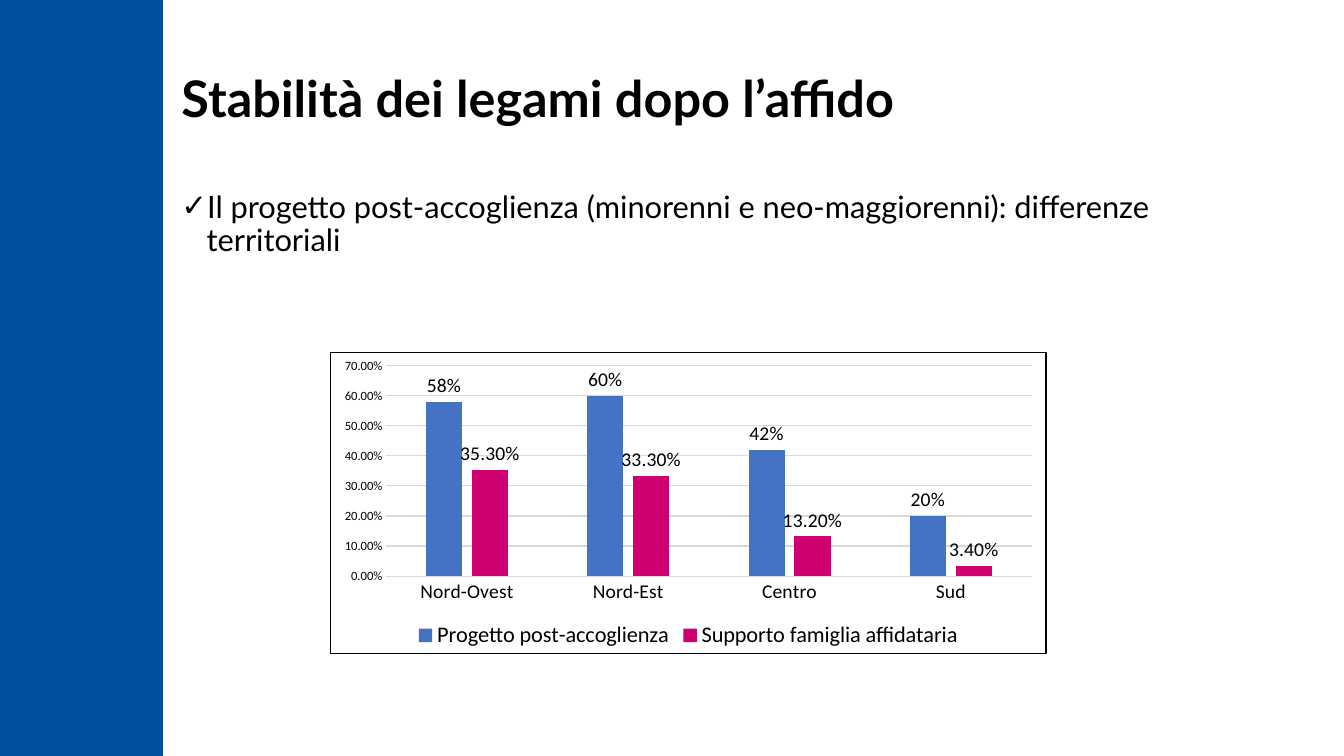
import pptx
import pptx.chart.data
import pptx.dml.color
import pptx.enum.chart
import pptx.enum.shapes
import pptx.enum.text
import pptx.oxml
import pptx.oxml.ns
import pptx.util
from dataclasses import dataclass

Inches = pptx.util.Inches
Pt = pptx.util.Pt
ChartEnum = pptx.enum.chart
TextEnum = pptx.enum.text


@dataclass(frozen=True)
class Theme:
    text_font: str = "Lato"
    chart_font: str = "Calibri"
    ink: str = "000000"
    paper: str = "FFFFFF"
    band: str = "004F9F"
    grid: str = "D9D9D9"
    series: tuple = ("4472C4", "CF0072")
    title_size: int = 36
    body_size: int = 22
    legend_size: int = 16
    label_size: int = 14
    chart_size: int = 10
    scale_size: int = 9


def rgb(color):
    return pptx.dml.color.RGBColor.from_string(color)


def format_font(font, *, size, name, color, bold=False):
    font.size, font.name, font.bold = Pt(size), name, bold
    font.color.rgb = rgb(color)


def write_text(frame, text, *, anchor, bullet=None, **font_format):
    frame.word_wrap = True
    frame.auto_size = TextEnum.MSO_AUTO_SIZE.NONE
    frame.vertical_anchor = anchor
    paragraph = frame.paragraphs[0]
    if bullet:
        properties = paragraph._p.get_or_add_pPr()
        properties.set("marL", str(Inches(0.25)))
        properties.set("indent", str(-Inches(0.25)))
        mark = pptx.oxml.parse_xml(
            f'<a:buChar {pptx.oxml.ns.nsdecls("a")} char="{bullet}"/>')
        properties.append(mark)
    paragraph.alignment = TextEnum.PP_ALIGN.LEFT
    paragraph.line_spacing = 0.9
    paragraph.space_before = Pt(0)
    run = paragraph.add_run()
    run.text = text
    format_font(run.font, **font_format)


class SlideBuilder:
    def __init__(self, slide, theme):
        self.slide, self.theme = slide, theme
        slide.background.fill.solid()
        slide.background.fill.fore_color.rgb = rgb(theme.paper)

    def side_band(self, *box):
        band = self.slide.shapes.add_shape(
            pptx.enum.shapes.MSO_SHAPE.RECTANGLE, *map(Inches, box))
        band.shadow.inherit = False
        band.fill.solid()
        band.fill.fore_color.rgb = rgb(self.theme.band)
        band.line.color.rgb = rgb(self.theme.band)
        band.line.width = Pt(1)

    def placeholder(self, index, box, text, **text_format):
        holder = self.slide.placeholders[index]
        holder.left, holder.top, holder.width, holder.height = map(Inches, box)
        write_text(holder.text_frame, text, name=self.theme.text_font,
                   color=self.theme.ink, **text_format)

    def chart_font(self, font, size):
        format_font(font, size=size, name=self.theme.chart_font,
                    color=self.theme.ink)

    def grid_line(self, line):
        line.color.rgb = rgb(self.theme.grid)
        line.width = Pt(0.75)

    def column_chart(self, box, categories, series):
        theme = self.theme
        data = pptx.chart.data.CategoryChartData()
        data.categories = categories
        for name, values, number_format in series:
            data.add_series(name, values, number_format)
        chart = self.slide.shapes.add_chart(
            ChartEnum.XL_CHART_TYPE.COLUMN_CLUSTERED,
            *map(Inches, box), data).chart
        chart.has_title = False
        self.chart_font(chart.font, theme.chart_size)

        # Columns and their labels
        plot = chart.plots[0]
        plot.vary_by_categories = False
        plot.gap_width, plot.overlap = 219, -27
        for columns, color, (_, _, number_format) in zip(
                plot.series, theme.series, series):
            columns.format.fill.solid()
            columns.format.fill.fore_color.rgb = rgb(color)
            labels = columns.data_labels
            labels.show_value = True
            labels.position = ChartEnum.XL_LABEL_POSITION.OUTSIDE_END
            labels.number_format = number_format
            labels.number_format_is_linked = False
            self.chart_font(labels.font, theme.label_size)

        # Axes
        regions, shares = chart.category_axis, chart.value_axis
        for axis, size in ((regions, theme.label_size),
                           (shares, theme.scale_size)):
            axis.major_tick_mark = ChartEnum.XL_TICK_MARK.NONE
            axis.minor_tick_mark = ChartEnum.XL_TICK_MARK.NONE
            self.chart_font(axis.tick_labels.font, size)
        self.grid_line(regions.format.line)
        self.grid_line(shares.major_gridlines.format.line)
        shares.format.line.fill.background()
        shares.minimum_scale, shares.maximum_scale = 0, 0.7
        shares.major_unit = 0.1
        shares.tick_labels.number_format = "0.00%"
        shares.tick_labels.number_format_is_linked = False

        # Legend
        chart.has_legend = True
        chart.legend.position = ChartEnum.XL_LEGEND_POSITION.BOTTOM
        chart.legend.include_in_layout = False
        self.chart_font(chart.legend.font, theme.legend_size)

        # Frame around the chart
        frame = pptx.oxml.parse_xml(
            f'<c:spPr {pptx.oxml.ns.nsdecls("c", "a")}>'
            f'<a:solidFill><a:srgbClr val="{theme.paper}"/></a:solidFill>'
            f'<a:ln w="{Pt(1)}"><a:solidFill><a:srgbClr val="{theme.ink}"/>'
            '</a:solidFill></a:ln></c:spPr>')
        chart._chartSpace.find(pptx.oxml.ns.qn("c:chart")).addnext(frame)


def main():
    presentation = pptx.Presentation()
    presentation.slide_width = Inches(13.33)
    presentation.slide_height = Inches(7.5)
    theme = Theme()
    builder = SlideBuilder(
        presentation.slides.add_slide(presentation.slide_layouts[1]), theme)

    # Band, title and topic
    builder.side_band(0, 0, 1.61, 7.5)
    builder.placeholder(
        0, (1.7, 0.16, 11.05, 1.69), "Stabilità dei legami dopo l’affido",
        size=theme.title_size, bold=True, anchor=TextEnum.MSO_ANCHOR.MIDDLE)
    builder.placeholder(
        1, (1.7, 1.85, 11.05, 5.34),
        "Il progetto post-accoglienza (minorenni e neo-maggiorenni): "
        "differenze territoriali",
        size=theme.body_size, bullet="✓", anchor=TextEnum.MSO_ANCHOR.TOP)

    # Territorial differences
    builder.column_chart(
        (3.27, 3.49, 7.11, 3),
        ("Nord-Ovest", "Nord-Est", "Centro", "Sud"),
        (("Progetto post-accoglienza", (0.58, 0.6, 0.42, 0.2), "0%"),
         ("Supporto famiglia affidataria",
          (0.353, 0.333, 0.132, 0.034), "0.00%")))

    presentation.save("out.pptx")


if __name__ == "__main__":
    main()
